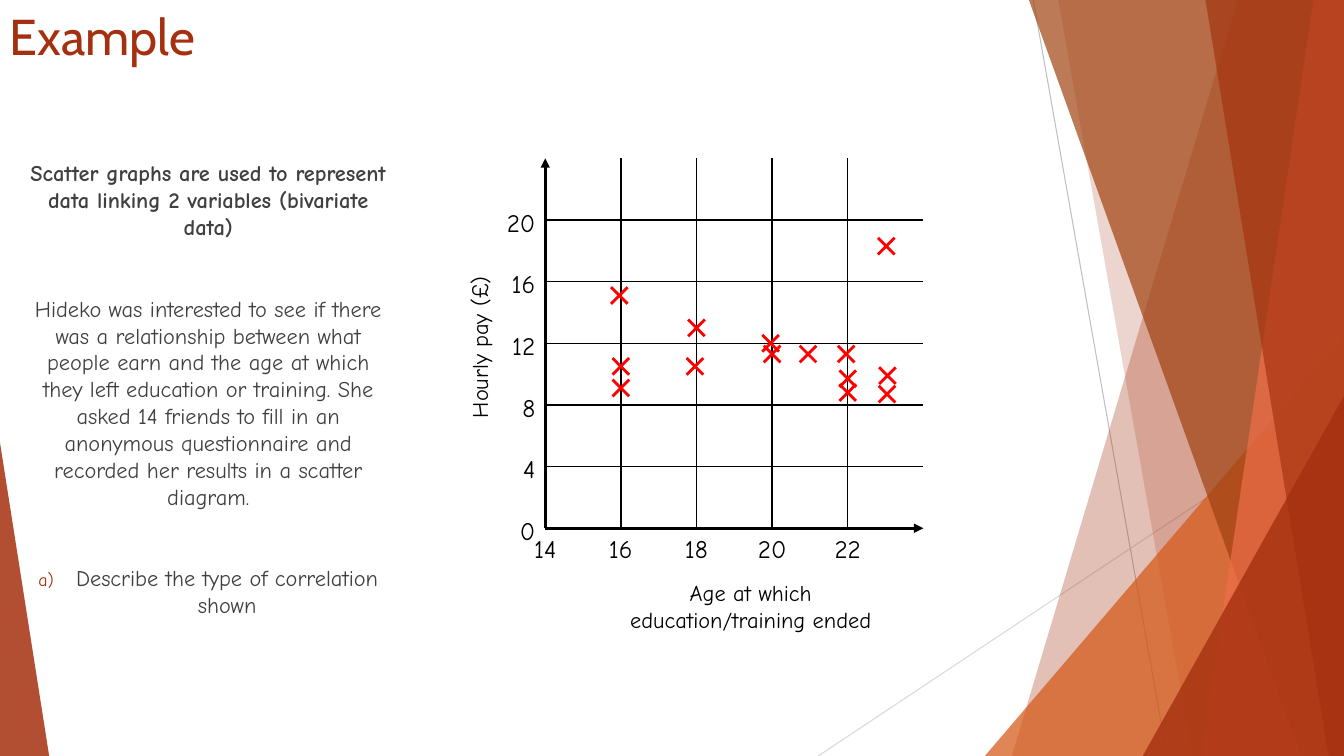
"""Build a slide that introduces scatter graphs with a worked example."""
import pptx
import pptx.dml.color
import pptx.enum.shapes
import pptx.enum.text
import pptx.oxml.ns
import pptx.util
from lxml import etree

Cm = pptx.util.Cm
Pt = pptx.util.Pt
qn = pptx.oxml.ns.qn
CENTER = pptx.enum.text.PP_ALIGN.CENTER
RIGHT = pptx.enum.text.PP_ALIGN.RIGHT

WIDTH, HEIGHT = 33.87, 19.05
RUST, BLACK, GREY, RED = "A5300F", "000000", "404040", "FF0000"

AXIS_LEFT, AXIS_RIGHT = 13.74, 23.27
AXIS_TOP, AXIS_BOTTOM = 3.99, 13.31
COLUMN = (AXIS_RIGHT - AXIS_LEFT) / 5
ROW = (AXIS_BOTTOM - AXIS_TOP) / 6
FIRST_AGE, AGE_STEP, PAY_STEP = 14, 2, 4
LABEL_WIDTH, LABEL_HEIGHT = 1.5, 1.02
CROSS_REACH = 0.21

FRIENDS = [
    (16, 9.1), (22, 8.8), (20, 11.3), (16, 10.5), (17.96, 10.5),
    (15.96, 15.1), (18, 13), (20.95, 11.3), (22, 9.7), (19.96, 12),
    (21.96, 11.3), (23.04, 8.7), (23.05, 9.9), (23.02, 18.3),
]

INTRODUCTION = "Scatter graphs are used to represent data linking 2 variables (bivariate data)"
STORY = (
    "Hideko was interested to see if there was a relationship between what people earn "
    "and the age at which they left education or training. She asked 14 friends to fill in "
    "an anonymous questionnaire and recorded her results in a scatter diagram."
)
QUESTION = "Describe the type of correlation shown"


def color(code):
    return pptx.dml.color.RGBColor.from_string(code)


def age_position(age):
    return AXIS_LEFT + (age - FIRST_AGE) / AGE_STEP * COLUMN


def pay_position(pay):
    return AXIS_BOTTOM - pay / PAY_STEP * ROW


class SlideBuilder:
    heading_font = "Cabin"
    body_font = "Comic Neue"

    def __init__(self, slide):
        self.slide = slide

    def paint(self, shape, fill, opacity):
        shape.shadow.inherit = False
        shape.fill.solid()
        shape.fill.fore_color.rgb = color(fill)
        shape.line.fill.background()
        solid = shape._element.spPr.find(qn("a:solidFill"))
        etree.SubElement(solid[0], qn("a:alpha"), val=str(opacity * 1000))

    def band(self, top_left, bottom_left, fill, opacity):
        builder = self.slide.shapes.build_freeform(Cm(top_left), 0, scale=1.0)
        corners = [(WIDTH, 0), (WIDTH, HEIGHT), (bottom_left, HEIGHT)]
        builder.add_line_segments([(Cm(x), Cm(y)) for x, y in corners], close=True)
        self.paint(builder.convert_to_shape(), fill, opacity)

    def triangle(self, left, top, width, apex, fill, opacity):
        shape = self.slide.shapes.add_shape(
            pptx.enum.shapes.MSO_SHAPE.ISOSCELES_TRIANGLE,
            Cm(left), Cm(top), Cm(width), Cm(HEIGHT - top))
        shape.adjustments[0] = apex
        self.paint(shape, fill, opacity)

    def line(self, start, end, stroke=BLACK, weight=1, arrow=False, shapes=None):
        shapes = shapes or self.slide.shapes
        connector = shapes.add_connector(
            pptx.enum.shapes.MSO_CONNECTOR.STRAIGHT,
            Cm(start[0]), Cm(start[1]), Cm(end[0]), Cm(end[1]))
        connector.line.color.rgb = color(stroke)
        connector.line.width = Pt(weight)
        properties = connector._element.spPr
        if arrow:
            etree.SubElement(properties.find(qn("a:ln")), qn("a:tailEnd"), type="triangle")
        etree.SubElement(properties, qn("a:effectLst"))

    def cross(self, x, y):
        group = self.slide.shapes.add_group_shape()
        for slope in (1, -1):
            rise = slope * CROSS_REACH
            self.line((x - CROSS_REACH, y - rise), (x + CROSS_REACH, y + rise),
                      RED, 2, shapes=group.shapes)

    def style(self, paragraph, size, ink, font, alignment, bold=False):
        paragraph.alignment = alignment
        paragraph.font.name = font
        paragraph.font.size = Pt(size)
        paragraph.font.bold = bold
        paragraph.font.color.rgb = color(ink)

    def text(self, wording, left, top, width, height, size=18, ink=BLACK,
             font=body_font, alignment=CENTER, rotation=0):
        box = self.slide.shapes.add_textbox(Cm(left), Cm(top), Cm(width), Cm(height))
        box.rotation = rotation
        box.text_frame.word_wrap = True
        paragraph = box.text_frame.paragraphs[0]
        paragraph.text = wording
        self.style(paragraph, size, ink, font, alignment)
        return box.text_frame

    def letter(self, paragraph):
        properties = paragraph._p.get_or_add_pPr()
        properties.set("marL", str(Cm(0.95)))
        properties.set("indent", str(Cm(-0.95)))
        bullet_color = etree.SubElement(properties, qn("a:buClr"))
        etree.SubElement(bullet_color, qn("a:srgbClr"), val=RUST)
        etree.SubElement(properties, qn("a:buSzPct"), val="80000")
        etree.SubElement(properties, qn("a:buAutoNum"), type="alphaLcParenR")

    def body(self):
        frame = self.text(INTRODUCTION, 0.41, 3.89, 9.68, 13.26, 16, GREY)
        frame.paragraphs[0].font.bold = True
        for wording in (STORY, QUESTION):
            paragraph = frame.add_paragraph()
            paragraph.text = wording
            paragraph.space_before = Pt(39.2)
            self.style(paragraph, 16, GREY, self.body_font, CENTER)
        self.letter(paragraph)

    def backdrop(self):
        self.line((26.04, 0), (29.41, HEIGHT), "BFBFBF", 0.75)
        self.line((WIDTH, 10.24), (20.62, HEIGHT), "D9D9D9", 0.75)
        self.band(31.19, 25.5, RUST, 30)
        self.band(26.67, 30.05, RUST, 20)
        self.triangle(24.82, 8.46, 9.05, 1, "D55816", 72)
        self.band(25.93, 32.79, "A04210", 70)
        self.band(33.1, 30.28, "EE6E4A", 70)
        self.band(30.38, 33.48, RUST, 65)
        self.triangle(28.8, 9.98, 5.07, 1, RUST, 80)
        self.triangle(0, 11.15, 1.24, 0, RUST, 85)

    def graph(self):
        origin = (AXIS_LEFT, AXIS_BOTTOM)
        for pay in range(4, 21, PAY_STEP):
            y = pay_position(pay)
            self.line((AXIS_LEFT, y), (AXIS_RIGHT, y))
        for end in ((AXIS_RIGHT, AXIS_BOTTOM), (AXIS_LEFT, AXIS_TOP)):
            self.line(origin, end, weight=2.25, arrow=True)
        for age in range(16, 23, AGE_STEP):
            x = age_position(age)
            self.line((x, AXIS_TOP), (x, AXIS_BOTTOM))
        for age in range(FIRST_AGE, 23, AGE_STEP):
            self.text(str(age), age_position(age) - LABEL_WIDTH / 2, AXIS_BOTTOM,
                      LABEL_WIDTH, LABEL_HEIGHT)
        for pay in range(0, 21, PAY_STEP):
            self.text(str(pay), AXIS_LEFT - LABEL_WIDTH, pay_position(pay) - 0.45,
                      LABEL_WIDTH, LABEL_HEIGHT, alignment=RIGHT)
        self.text("Age at which education/training ended", 15.11, 14.48, 7.62, 1.63, 16)
        self.text("Hourly pay (£)", 7.54, 8.28, 9.09, 0.94, 16, rotation=270)
        for age, pay in FRIENDS:
            self.cross(age_position(age), pay_position(pay))


def main():
    presentation = pptx.Presentation()
    presentation.slide_width = Cm(WIDTH)
    presentation.slide_height = Cm(HEIGHT)
    builder = SlideBuilder(presentation.slides.add_slide(presentation.slide_layouts[6]))
    builder.backdrop()
    builder.text("Example", 0, 0, 23.88, 1.98, 36, RUST, builder.heading_font,
                 pptx.enum.text.PP_ALIGN.LEFT)
    builder.body()
    builder.graph()
    presentation.save("out.pptx")


if __name__ == "__main__":
    main()
